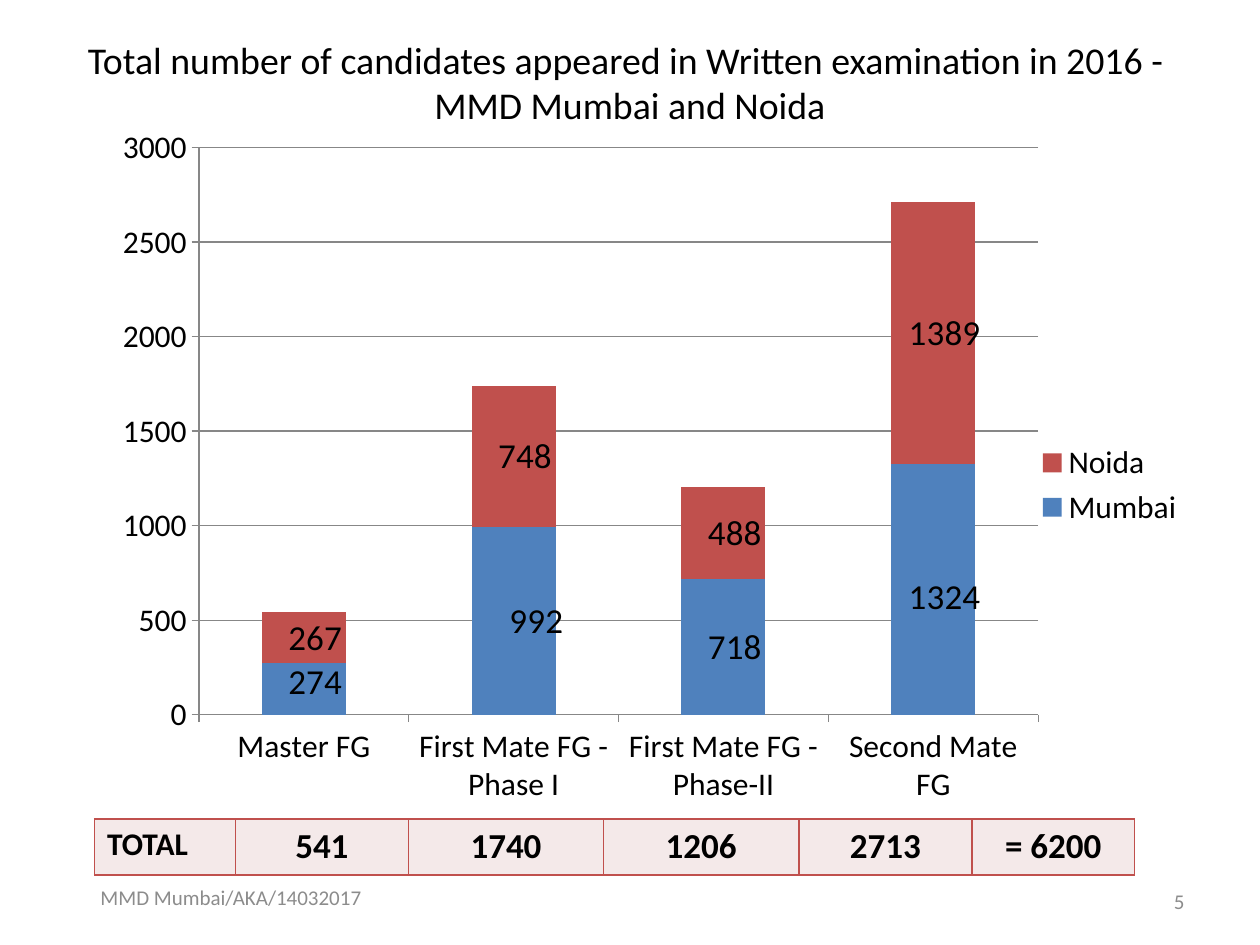
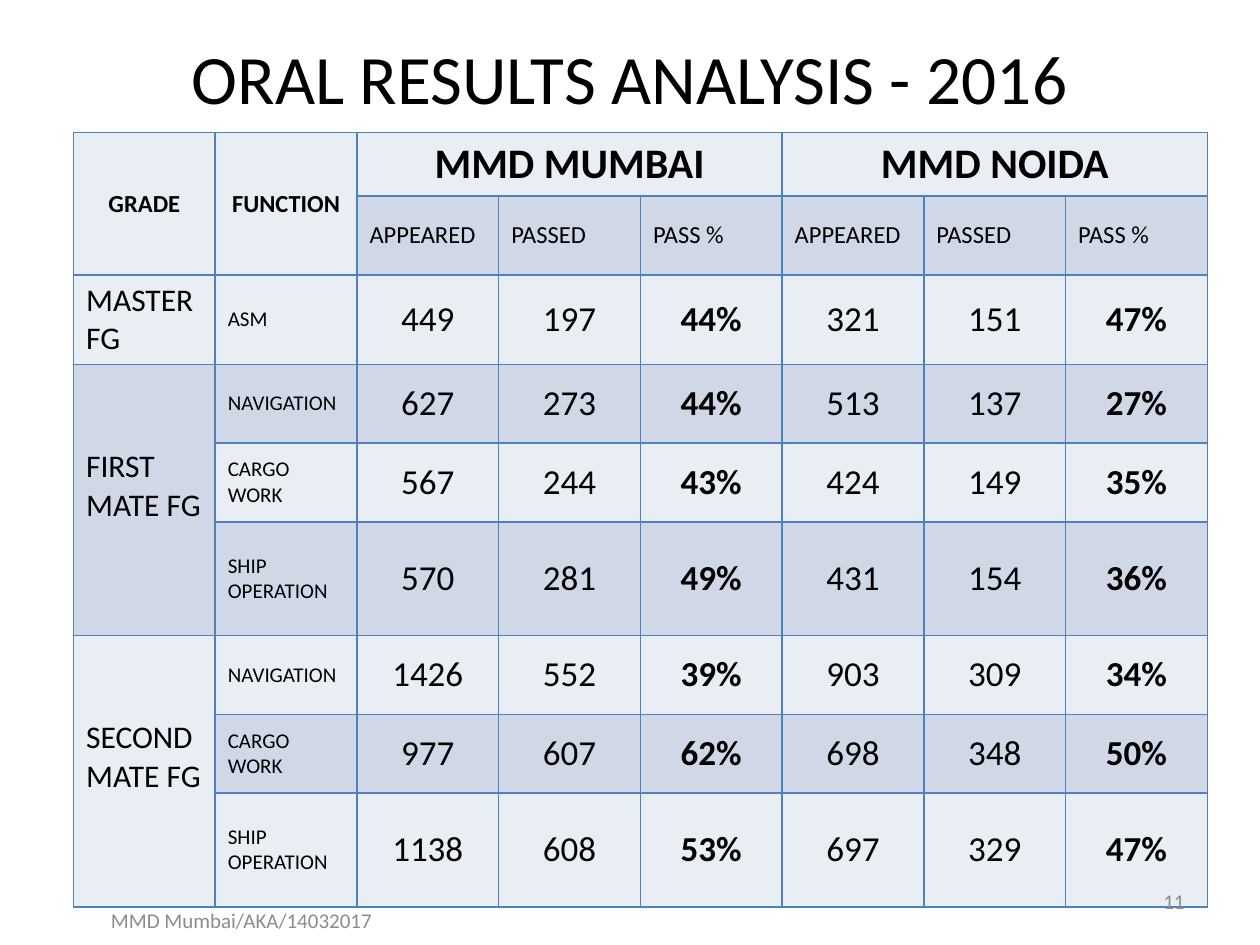
from lxml.etree import SubElement
from pptx import Presentation
from pptx.chart.data import CategoryChartData
from pptx.dml.color import RGBColor
from pptx.enum.chart import XL_CHART_TYPE as CT, XL_LABEL_POSITION as LP, XL_LEGEND_POSITION as LEG, XL_TICK_MARK as TICK
from pptx.enum.text import MSO_ANCHOR as ANC, MSO_AUTO_SIZE as AUTO, PP_ALIGN as AL
from pptx.oxml import parse_xml
from pptx.oxml.ns import nsdecls, qn
from pptx.util import Pt

FONT = "Calibri"
COLORS = {
    "text": "000000",
    "muted": "8C8C8C",
    "axis": "878787",
    "mumbai": "4F81BD",
    "noida": "C0504D",
    "total": "F4E9E9",
    "light": "E9EDF4",
    "dark": "D0D8E8",
}
FOOTER = "MMD Mumbai/AKA/14032017"
NUMBER_BOX = (516, 500.5, 168, 28.5)

CATEGORIES = ["Master FG", "First Mate FG - Phase I", "First Mate FG - Phase-II", "Second Mate FG"]
APPEARED = {"Mumbai": [274, 992, 718, 1324], "Noida": [267, 748, 488, 1389]}
LABEL_SHIFTS = [
    (0.01, -0.01), (0.02, 0), (0.01, 0), (0.01, 0.01),
    (0.01, 0), (0.01, 0), (0.01, 0), (0.01, 0),
]
PLOT_AREA = {"x": 0.12, "y": 0.03, "w": 0.74, "h": 0.79}
TOTALS = ["TOTAL", "541", "1740", "1206", "2713", "= 6200"]
TOTAL_WIDTHS = [80.5, 99, 111.5, 111.5, 99, 93]

MEASURES = ["APPEARED", "PASSED", "PASS %"]
ROW_HEIGHTS = [36.5, 45, 51, 45, 45, 65, 45, 45, 65]
RESULTS = [
    ("MASTER FG", [("ASM", "449 197 44% 321 151 47%")]),
    ("FIRST MATE FG", [
        ("NAVIGATION", "627 273 44% 513 137 27%"),
        ("CARGO WORK", "567 244 43% 424 149 35%"),
        ("SHIP OPERATION", "570 281 49% 431 154 36%"),
    ]),
    ("SECOND MATE FG", [
        ("NAVIGATION", "1426 552 39% 903 309 34%"),
        ("CARGO WORK", "977 607 62% 698 348 50%"),
        ("SHIP OPERATION", "1138 608 53% 697 329 47%"),
    ]),
]


def rgb(name):
    return RGBColor.from_string(COLORS[name])


def set_font(font, size, bold=False, color="text"):
    for key, value in {"name": FONT, "size": Pt(size), "bold": bold}.items():
        setattr(font, key, value)
    font.color.rgb = rgb(color)


def write(tf, text, size, align=AL.LEFT, bold=False, color="text"):
    tf.text = text
    p = tf.paragraphs[0]
    p.alignment = align
    for r in p.runs:
        set_font(r.font, size, bold, color)


def place(sp, box):
    for key, value in zip(("left", "top", "width", "height"), box):
        setattr(sp, key, Pt(value))


def format_frame(tf):
    for key, value in {"word_wrap": True, "auto_size": AUTO.NONE, "vertical_anchor": ANC.MIDDLE}.items():
        setattr(tf, key, value)


def add_titled_slide(prs, title, size, box):
    s = prs.slides.add_slide(prs.slide_layouts[5])
    sp = s.shapes.title
    place(sp, box)
    format_frame(sp.text_frame)
    write(sp.text_frame, title, size, AL.CENTER)
    return s


def add_note(s, text, align, box):
    tf = s.shapes.add_textbox(*map(Pt, box)).text_frame
    format_frame(tf)
    write(tf, text, 12, align, color="muted")


def add_footer(s, number, box):
    add_note(s, number, AL.RIGHT, NUMBER_BOX)
    add_note(s, FOOTER, AL.CENTER, box)


def add_grid(s, left, top, widths, heights):
    frame = s.shapes.add_table(len(heights), len(widths), Pt(left), Pt(top),
                               Pt(sum(widths)), Pt(sum(heights)))
    table = frame.table
    table.first_row = table.horz_banding = False
    for col, width in zip(table.columns, widths):
        col.width = Pt(width)
    for row, height in zip(table.rows, heights):
        row.height = Pt(height)
    return frame


def fill_cell(cell, fill):
    cell.fill.solid()
    cell.fill.fore_color.rgb = rgb(fill)


def write_cell(cell, text, size, align=AL.LEFT, bold=False, anchor=ANC.MIDDLE):
    cell.vertical_anchor = anchor
    write(cell.text_frame, text, size, align, bold)


def add_borders(frame, color):
    for props in frame.element.iter(qn("a:tcPr")):
        for i, side in enumerate("LRTB"):
            props.insert(i, parse_xml(
                f'<a:ln{side} {nsdecls("a")} w="12700"><a:solidFill>'
                f'<a:srgbClr val="{COLORS[color]}"/></a:solidFill></a:ln{side}>'))


def manual_layout(values, target=None):
    layout = parse_xml(f'<c:layout {nsdecls("c")}><c:manualLayout/></c:layout>')
    if target:
        SubElement(layout[0], qn("c:layoutTarget")).set("val", target)
        for key in "xy":
            SubElement(layout[0], qn(f"c:{key}Mode")).set("val", "edge")
    for key, value in values.items():
        SubElement(layout[0], qn(f"c:{key}")).set("val", str(value))
    return layout


def add_appeared_chart(s, box):
    data = CategoryChartData()
    data.categories = CATEGORIES
    for name, values in APPEARED.items():
        data.add_series(name, values)
    chart = s.shapes.add_chart(CT.COLUMN_STACKED, *map(Pt, box), data).chart
    set_font(chart.font, 18)
    chart.has_title = False
    chart.has_legend = True
    chart.legend.position = LEG.RIGHT
    chart.legend.include_in_layout = False
    plot = chart.plots[0]
    for key, value in {"gap_width": 150, "overlap": 100, "vary_by_categories": False}.items():
        setattr(plot, key, value)
    for series in plot.series:
        series.format.fill.solid()
        series.format.fill.fore_color.rgb = rgb(series.name.lower())
        for i in range(len(CATEGORIES)):
            label = series.points[i].data_label
            set_font(label.font, 20)
            label.position = LP.CENTER
    for label, shift in zip(chart.element.iter(qn("c:dLbl")), LABEL_SHIFTS):
        label.insert(1, manual_layout(dict(zip("xy", shift))))
    value_axis = chart.value_axis
    value_axis.minimum_scale, value_axis.maximum_scale, value_axis.major_unit = 0, 3000, 500
    value_axis.has_major_gridlines = True
    for axis in (chart.category_axis, value_axis):
        axis.major_tick_mark = TICK.OUTSIDE
        axis.format.line.color.rgb = rgb("axis")
    value_axis.major_gridlines.format.line.color.rgb = rgb("axis")
    area = chart.element.find(".//" + qn("c:plotArea"))
    for old in area.findall(qn("c:layout")):
        area.remove(old)
    area.insert(0, manual_layout(PLOT_AREA, "inner"))


def add_totals(s, left, top):
    frame = add_grid(s, left, top, TOTAL_WIDTHS, [32])
    for i, text in enumerate(TOTALS):
        cell = frame.table.cell(0, i)
        fill_cell(cell, "total")
        size, align = (20, AL.CENTER) if i else (18, AL.LEFT)
        write_cell(cell, text, size, align, True, ANC.TOP)
    add_borders(frame, "noida")


def add_results(s, left, top):
    frame = add_grid(s, left, top, [81] * 8, ROW_HEIGHTS)
    table = frame.table
    for r in range(len(ROW_HEIGHTS)):
        for c in range(8):
            fill_cell(table.cell(r, c), "dark" if r % 2 else "light")
    for c, text in enumerate(("GRADE", "FUNCTION")):
        table.cell(0, c).merge(table.cell(1, c))
        write_cell(table.cell(0, c), text, 14, AL.CENTER, True)
    for c, text in ((2, "MMD MUMBAI"), (5, "MMD NOIDA")):
        table.cell(0, c).merge(table.cell(0, c + 2))
        write_cell(table.cell(0, c), text, 24, AL.CENTER, True, ANC.TOP)
        for i, measure in enumerate(MEASURES):
            write_cell(table.cell(1, c + i), measure, 14)
    r = 2
    for grade, functions in RESULTS:
        cell = table.cell(r, 0)
        if len(functions) > 1:
            cell.merge(table.cell(r + len(functions) - 1, 0))
            cell.margin_bottom = Pt(19.6)
        write_cell(cell, grade, 18)
        for function, figures in functions:
            write_cell(table.cell(r, 1), function, 12)
            for c, figure in enumerate(figures.split(), 2):
                write_cell(table.cell(r, c), figure, 20, AL.CENTER, figure.endswith("%"))
            r += 1
    add_borders(frame, "mumbai")


def add_appeared_slide(prs):
    title = "Total number of candidates appeared in Written examination in 2016 - \vMMD Mumbai and Noida"
    s = add_titled_slide(prs, title, 21.6, (36, 21.6, 648, 50.4))
    add_appeared_chart(s, (36, 72, 648, 410.4))
    add_totals(s, 54, 468)
    add_footer(s, "5", (18, 498, 228, 28.8))


def add_results_slide(prs):
    s = add_titled_slide(prs, "ORAL RESULTS ANALYSIS - 2016", 39.6, (36, 21.6, 648, 44.6))
    add_results(s, 42, 75.6)
    add_footer(s, "11", (24, 511.2, 228, 28.8))


def main():
    prs = Presentation()
    prs.slide_width, prs.slide_height = Pt(720), Pt(540)
    add_appeared_slide(prs)
    add_results_slide(prs)
    prs.save("out.pptx")


if __name__ == "__main__":
    main()
